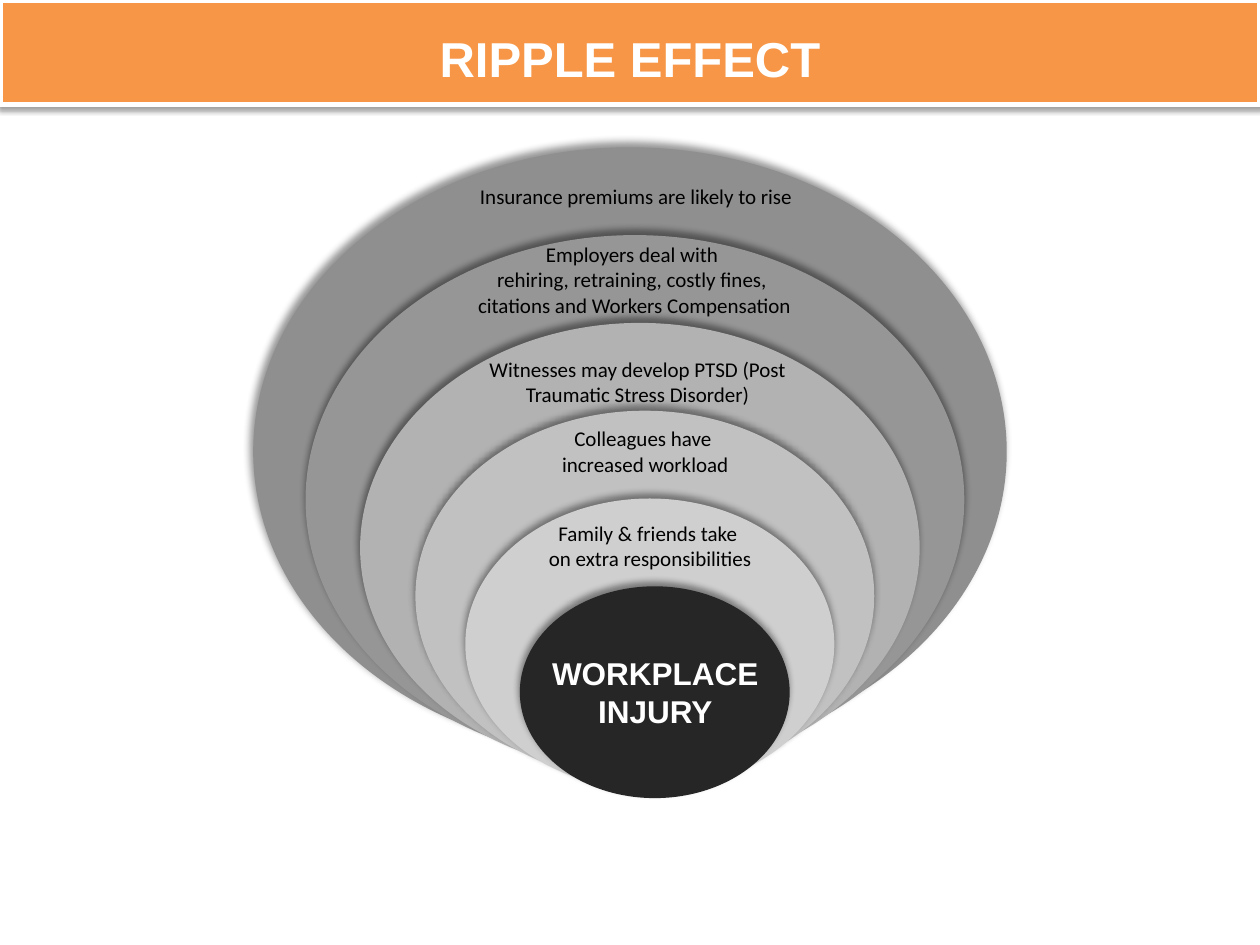
from dataclasses import dataclass

from lxml import etree
from pptx import Presentation
from pptx.dml.color import RGBColor
from pptx.enum import shapes, text
from pptx.oxml import ns
from pptx.util import Cm, Pt

WHITE = RGBColor(0xFF, 0xFF, 0xFF)
BLACK = RGBColor(0x00, 0x00, 0x00)
ORANGE = RGBColor(0xF7, 0x96, 0x46)
CHARCOAL = RGBColor(0x26, 0x26, 0x26)
GREYS = [RGBColor(level, level, level) for level in (0x8F, 0x96, 0xB2, 0xC1, 0xCF)]

# Each ripple inwards moves by a fixed step (cm).
FIRST_TOP, TOP_STEP = 2.97, 1.77
FIRST_BOTTOM, BOTTOM_STEP = 15.24, 0.17
FIRST_CENTRE, CENTRE_STEP = 12.7, 0.1


@dataclass
class Ripple:
    width: float
    fill: RGBColor
    shadow_angle: int
    label: str
    label_box: tuple


RIPPLES = [
    Ripple(15.19, GREYS[0], 240, "Insurance premiums are likely to rise",
           (8.66, 3.58, 8.33, 0.76)),
    Ripple(13.28, GREYS[1], 270,
           "Employers deal with \vrehiring, retraining, costly fines, \v"
           "citations and Workers Compensation",
           (8.66, 4.75, 8.26, 1.8)),
    Ripple(11.28, GREYS[2], 254,
           "Witnesses may develop PTSD (Post Traumatic Stress Disorder)",
           (9.5, 7.06, 6.71, 1.27)),
    Ripple(9.25, GREYS[3], 256, "Colleagues have \vincreased workload",
           (10.29, 8.46, 5.44, 1.27)),
    Ripple(7.44, GREYS[4], 258, "Family & friends take\v on extra responsibilities",
           (10.34, 10.36, 5.44, 1.27)),
    Ripple(5.44, CHARCOAL, 256, "WORKPLACE\nINJURY",
           (10.77, 13.06, 4.88, 1.8)),
]


def add_shadow(shape, opacity, blur, distance, angle):
    """Give the shape a black outer shadow; blur and distance in points."""
    shape.shadow.inherit = False
    effects = shape._element.spPr.find(ns.qn("a:effectLst"))
    shadow = etree.SubElement(
        effects, ns.qn("a:outerShdw"), blurRad=str(Pt(blur)),
        dist=str(Pt(distance)), dir=str(angle * 60000), rotWithShape="0")
    color = etree.SubElement(shadow, ns.qn("a:srgbClr"), val=str(BLACK))
    etree.SubElement(color, ns.qn("a:alpha"), val=str(opacity * 1000))


def add_filled_shape(slide, kind, box, fill):
    shape = slide.shapes.add_shape(kind, *map(Cm, box))
    shape.fill.solid()
    shape.fill.fore_color.rgb = fill
    shape.line.fill.background()
    return shape


def add_label(slide, box, wording, size, font_name="Calibri", color=BLACK, bold=False):
    text_frame = slide.shapes.add_textbox(*map(Cm, box)).text_frame
    text_frame.word_wrap = True
    text_frame.auto_size = text.MSO_AUTO_SIZE.SHAPE_TO_FIT_TEXT
    text_frame.text = wording
    for paragraph in text_frame.paragraphs:
        paragraph.alignment = text.PP_ALIGN.CENTER
        for run in paragraph.runs:
            run.font.name = font_name
            run.font.size = Pt(size)
            run.font.bold = bold
            run.font.color.rgb = color


def add_title_banner(slide):
    banner = add_filled_shape(
        slide, shapes.MSO_SHAPE.RECTANGLE, (0, 0, 25.4, 2.11), ORANGE)
    banner.line.color.rgb = WHITE
    banner.line.width = Pt(3)
    add_shadow(banner, 37, 3.1, 1.6, 90)
    add_label(slide, (0, 0.46, 25.4, 1.45), "RIPPLE EFFECT", 28, "Arial", WHITE, True)


def add_ripple(slide, index, ripple):
    top = FIRST_TOP + index * TOP_STEP
    height = FIRST_BOTTOM + index * BOTTOM_STEP - top
    left = FIRST_CENTRE + index * CENTRE_STEP - ripple.width / 2
    oval = add_filled_shape(
        slide, shapes.MSO_SHAPE.OVAL, (left, top, ripple.width, height), ripple.fill)
    add_shadow(oval, 42, 4, 3, ripple.shadow_angle)
    if ripple.fill == CHARCOAL:
        add_label(slide, ripple.label_box, ripple.label, 18, "Arial", WHITE, True)
    else:
        add_label(slide, ripple.label_box, ripple.label, 12)


def main():
    presentation = Presentation()
    presentation.slide_width = Cm(25.4)
    presentation.slide_height = Cm(19.05)
    slide = presentation.slides.add_slide(presentation.slide_layouts[6])
    add_title_banner(slide)
    for index, ripple in enumerate(RIPPLES):
        add_ripple(slide, index, ripple)
    presentation.save("out.pptx")


if __name__ == "__main__":
    main()
